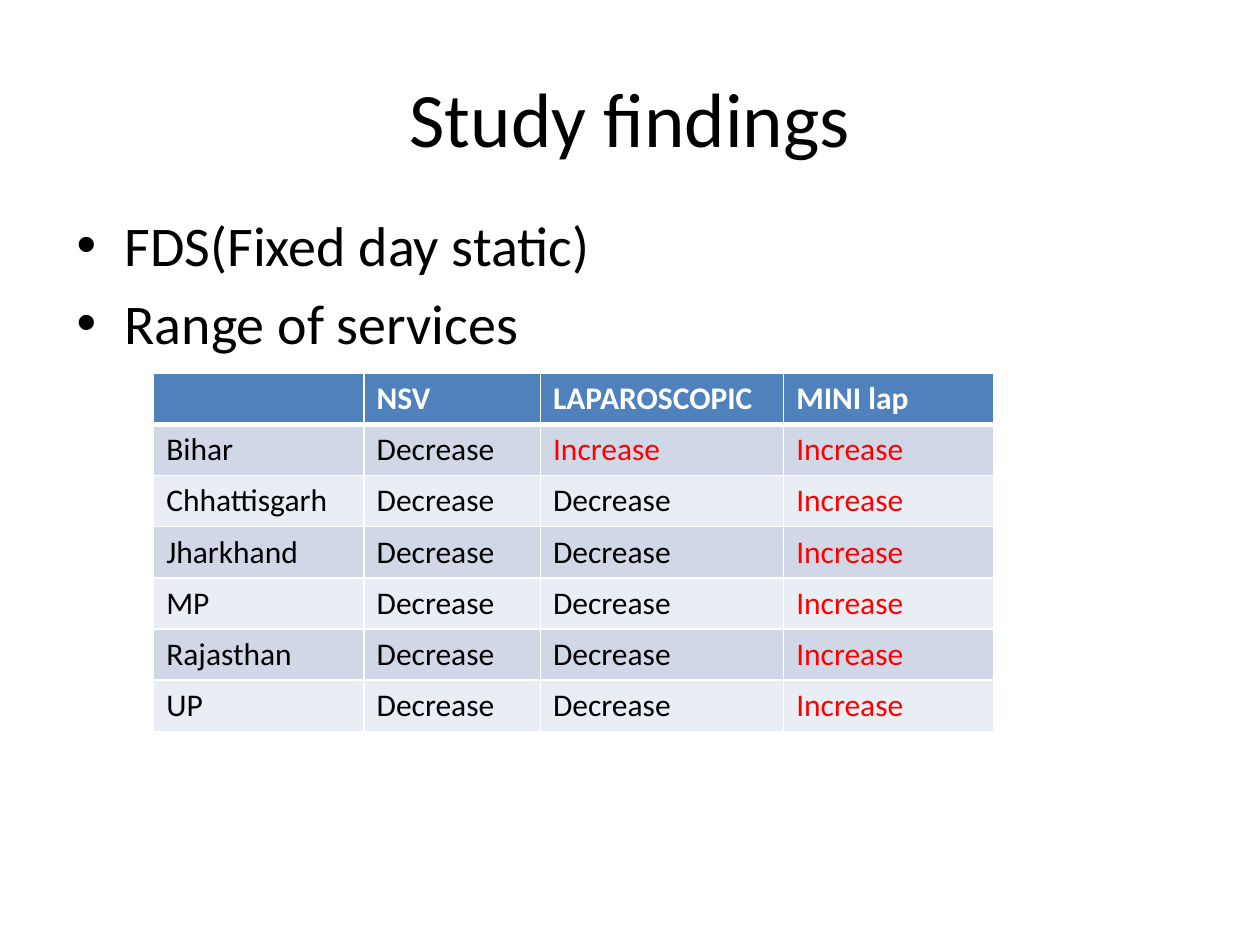
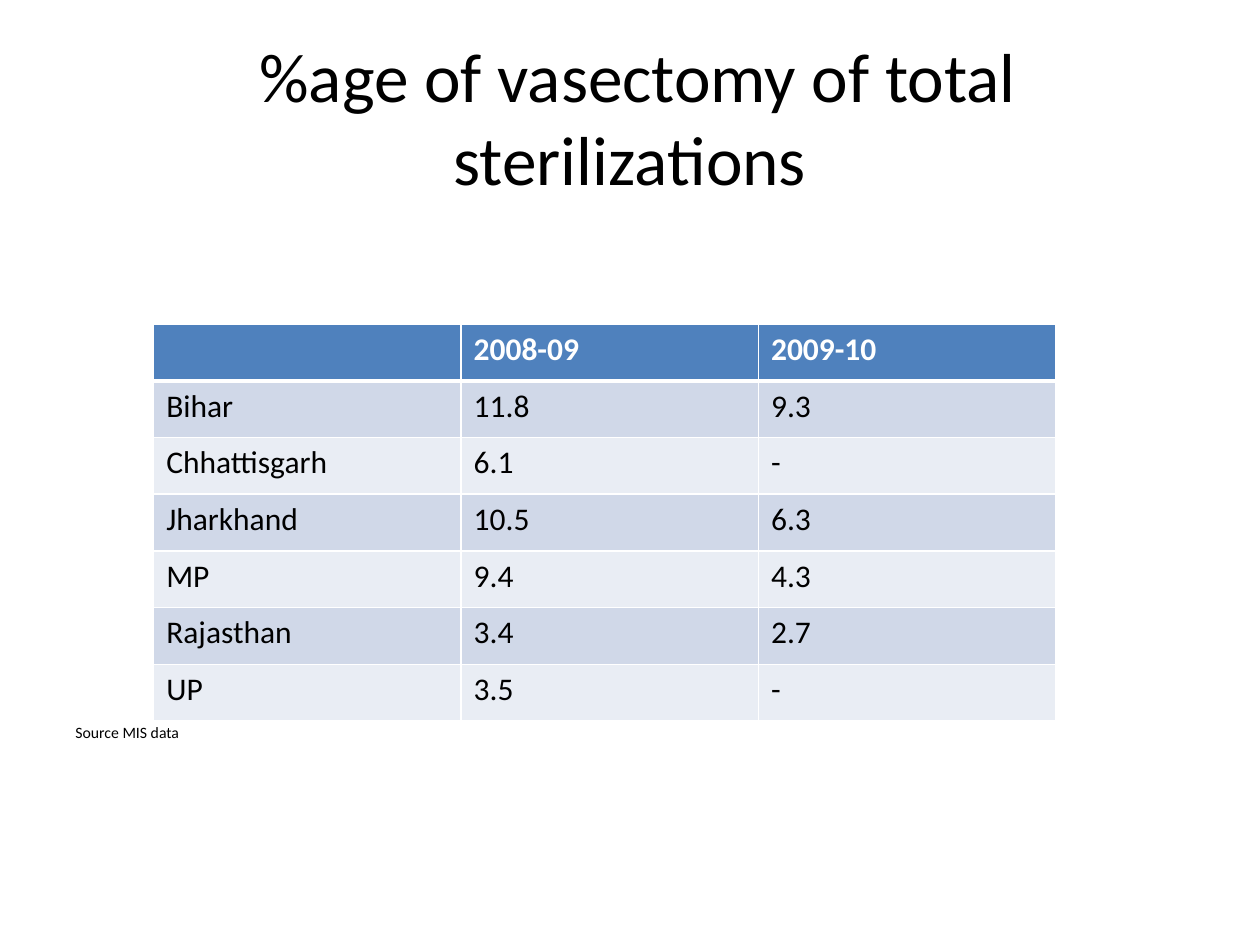
import dataclasses

import pptx
import pptx.dml.color
import pptx.enum.text
import pptx.oxml
import pptx.oxml.ns
import pptx.util


@dataclasses.dataclass(frozen=True)
class Theme:
    font: str = "Calibri"
    ink: str = "000000"
    paper: str = "FFFFFF"
    alert: str = "FF0000"
    head: str = "4F81BD"
    bands: tuple = ("D0D8E8", "E9EDF4")
    title: float = 44
    tight: float = 39.6
    body: float = 32
    cell: float = 18
    note: float = 9
    thin: float = 1
    thick: float = 3


theme = Theme()
RGB = pptx.dml.color.RGBColor.from_string
Pt = pptx.util.Pt
ANCHOR = pptx.enum.text.MSO_ANCHOR

deck = pptx.Presentation()
deck.slide_width = W = pptx.util.Inches(10)
deck.slide_height = H = pptx.util.Inches(7.5)
only = deck.slide_layouts.get_by_name("Title Only")

states = ["Bihar", "Chhattisgarh", "Jharkhand", "MP", "Rajasthan", "UP"]
lap = ["Increase"] + ["Decrease"] * 5
trends = [(state, "Decrease", trend, "Increase")
          for state, trend in zip(states, lap)]
rates = zip(states,
            ["11.8", "6.1", "10.5", "9.4", "3.4", "3.5"],
            ["9.3", "-", "6.3", "4.3", "2.7", "-"])

# Places and widths are shares of the slide's width and height.
pages = [
    dict(title="Study findings", size=theme.title,
         lines=["FDS(Fixed day static)", "Range of services"],
         text=(0.051, 0.216, 0.9, 0.65), type=theme.body, bullet="•",
         top=0.395, tall=0.379, cols=[0.167, 0.14, 0.193, 0.167],
         rows=[("", "NSV", "LAPAROSCOPIC", "MINI lap"), *trends]),
    dict(title=" %age of vasectomy of total sterilizations", size=theme.tight,
         lines=["Source MIS data"],
         text=(0.05, 0.758, 0.9, 0.04), type=theme.note, bullet=None,
         top=0.343, tall=0.42, cols=[0.244, 0.236, 0.236],
         rows=[("", "2008-09", "2009-10"), *rates]),
]


def write(para, text, size, color=theme.ink, bold=False):
    run = para.add_run()
    run.text = text
    look = dict(name=theme.font, size=Pt(size), bold=bold)
    for key, value in look.items():
        setattr(run.font, key, value)
    run.font.color.rgb = RGB(color)


def edge(cell, side, width):
    """Draw one border of a cell; side is L, R, T or B."""
    cell._tc.get_or_add_tcPr().append(pptx.oxml.parse_xml(
        f'<a:ln{side} {pptx.oxml.ns.nsdecls("a")} w="{Pt(width)}">'
        f'<a:solidFill><a:srgbClr val="{theme.paper}"/></a:solidFill>'
        f'</a:ln{side}>'))


for page in pages:
    slide = deck.slides.add_slide(only)

    title = slide.shapes.title
    place = dict(left=W * 0.05, top=H * 0.04, width=W * 0.9, height=H / 6)
    for key, value in place.items():
        setattr(title, key, int(value))
    frame = title.text_frame
    frame.auto_size = pptx.enum.text.MSO_AUTO_SIZE.NONE
    frame.vertical_anchor = ANCHOR.MIDDLE
    para = frame.paragraphs[0]
    para.alignment = pptx.enum.text.PP_ALIGN.CENTER
    write(para, page["title"], page["size"])

    x, y, wide, tall = page["text"]
    box = slide.shapes.add_textbox(
        int(W * x), int(H * y), int(W * wide), int(H * tall))
    frame = box.text_frame
    frame.word_wrap = True
    for i, line in enumerate(page["lines"]):
        para = frame.add_paragraph() if i else frame.paragraphs[0]
        para.space_before = Pt(page["type"] * 0.2)
        write(para, line, page["type"])
        if page["bullet"]:
            props = para._p.get_or_add_pPr()
            indent = pptx.util.Inches(0.38)
            props.set("marL", str(indent))
            props.set("indent", str(-indent))
            props.append(pptx.oxml.parse_xml(
                f'<a:buFont {pptx.oxml.ns.nsdecls("a")} typeface="Arial"/>'))
            props.append(pptx.oxml.parse_xml(
                f'<a:buChar {pptx.oxml.ns.nsdecls("a")} '
                f'char="{page["bullet"]}"/>'))

    rows, cols = page["rows"], page["cols"]
    table = slide.shapes.add_table(
        len(rows), len(cols), int(W * 0.122), int(H * page["top"]),
        int(W * sum(cols)), int(H * page["tall"])).table
    for col, share in zip(table.columns, cols):
        col.width = int(W * share)
    for r, row in enumerate(rows):
        table.rows[r].height = int(H * page["tall"] / len(rows))
        for c, text in enumerate(row):
            cell = table.cell(r, c)
            edges = dict(L=theme.thin, R=theme.thin,
                         T=theme.thick if r == 1 else theme.thin,
                         B=theme.thick if r == 0 else theme.thin)
            for side, width in edges.items():
                edge(cell, side, width)
            cell.fill.solid()
            cell.fill.fore_color.rgb = RGB(
                theme.bands[(r - 1) % 2] if r else theme.head)
            color = theme.alert if text == "Increase" else theme.ink
            if text:
                write(cell.text_frame.paragraphs[0], text, theme.cell,
                      color if r else theme.paper, bold=r == 0)

deck.save("out.pptx")
